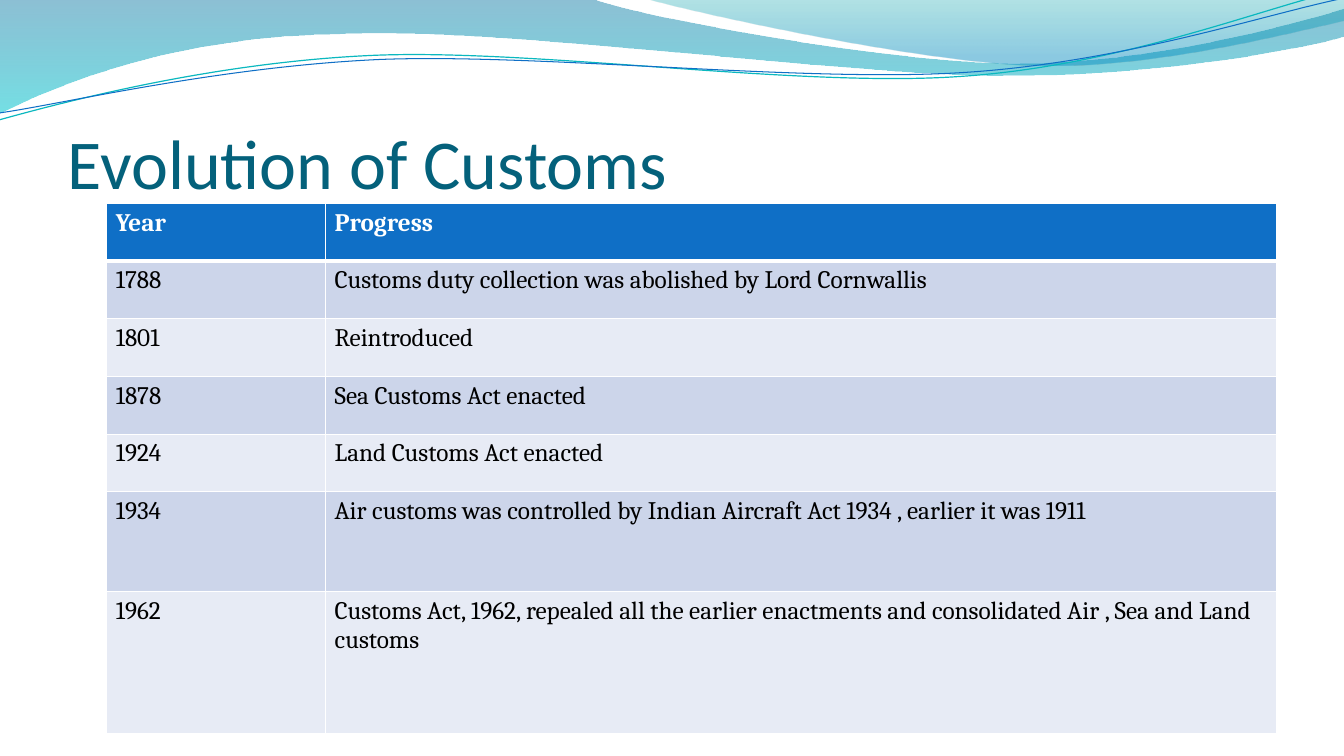
from math import cos, radians, sin
from lxml import etree
from pptx import Presentation
from pptx.dml.color import RGBColor
from pptx.enum.text import MSO_ANCHOR
from pptx.oxml.ns import qn
from pptx.util import Inches, Pt

BOTTOM = MSO_ANCHOR.BOTTOM
TILT = 357.3  # turn of the strands, in degrees

# Each outline is a start point, then lines (2 numbers) and curves (6 numbers)
WAVES = [
    ([(0, 0), (5.87, -0.01), (6.34, 0.17, 8.85, 0.63, 10.11, 0.63),
      (11.38, 0.63, 12.78, 0.26, 13.33, 0.09), (13.35, 0.36),
      (13.11, 0.44, 11.6, 0.76, 9.94, 0.75),
      (8.29, 0.75, 5.09, 0.28, 3.43, 0.34),
      (1.72, 0.36, 0.61, 0.83, -0.01, 1.13)],
     [(0, "0074A1", 45), (1, "00C6CF", 55)]),
    ([(6.39, -0.01), (6.79, 0.11, 9.09, 0.62, 10.25, 0.65),
      (11.41, 0.69, 12.82, 0.32, 13.33, 0.21), (13.33, 0)],
     [(0, "00A1A9", 30), (0.8, "008BBF", 45)]),
]
# Strands also have the centre of their turn
STRANDS = [
    ([(-0.01, 1.19), (0.64, 1.01, 2.11, 0.62, 3.69, 0.55),
      (5.27, 0.48, 7.9, 0.87, 9.5, 0.76),
      (11.1, 0.66, 12.52, 0.08, 13.31, -0.1)],
     (6.65, 0.58), "0AB8BF", 0.85),
    ([(0, 1.12), (0.63, 1.03, 2.18, 0.66, 3.78, 0.59),
      (5.37, 0.53, 7.96, 0.82, 9.55, 0.72),
      (11.15, 0.62, 12.55, 0.14, 13.34, -0.02)],
     (6.67, 0.59), "0F6FC6", 0.75),
]
COLS = [2.17, 9.43]
HEIGHTS = [2.86 / 5] * 5 + [0.99, 1.41]
ROWS = [
    ("Year", "Progress"),
    ("1788", "Customs duty collection was abolished by Lord Cornwallis"),
    ("1801", "Reintroduced"),
    ("1878", "Sea Customs Act enacted"),
    ("1924", "Land Customs Act enacted"),
    ("1934", "Air customs was controlled by Indian Aircraft Act 1934 , "
             "earlier it was 1911"),
    ("1962", "Customs Act, 1962, repealed all the earlier enactments and "
             "consolidated Air , Sea and Land customs"),
]


def color(text):
    return RGBColor.from_string(text)


def assign(item, **values):
    for name, value in values.items():
        setattr(item, name, value)


def write(frame, text, hue, **style):
    frame.text = text
    font = frame.paragraphs[0].runs[0].font
    assign(font, **style)
    font.color.rgb = color(hue)


def pairs(part):
    return list(zip(part[::2], part[1::2]))


def level(outline, centre):
    """Turn an outline back to its untilted place."""
    turn = radians(360 - TILT)
    mid_x, mid_y = centre
    flat = []
    for part in outline:
        spots = []
        for x, y in pairs(part):
            dx, dy = x - mid_x, y - mid_y
            spots += [mid_x + dx * cos(turn) - dy * sin(turn),
                      mid_y + dx * sin(turn) + dy * cos(turn)]
        flat.append(tuple(spots))
    return flat


def add_path(slide, outline, close):
    points = [(Inches(x), Inches(y)) for part in outline
              for x, y in pairs(part)]
    path = slide.shapes.build_freeform(*points[0])
    path.add_line_segments(points[1:], close=close)
    shape = path.convert_to_shape()
    shape.shadow.inherit = False
    # Join each three lines of a curve into one Bezier segment
    lines = iter(list(shape._element.spPr.iter(qn("a:lnTo"))))
    for part in outline[1:]:
        line = next(lines)
        if len(part) == 6:
            line.addprevious(etree.Element(qn("a:cubicBezTo")))
            curve = line.getprevious()
            for piece in (line, next(lines), next(lines)):
                curve.append(piece[0])
                piece.getparent().remove(piece)
    return shape


def add_wave(slide, outline, stops):
    shape = add_path(slide, outline, True)
    shape.line.fill.background()
    fill = shape.fill
    fill.gradient()
    fill.gradient_angle = 270
    for stop, (place, hue, _) in zip(fill.gradient_stops, stops):
        stop.position = place
        stop.color.rgb = color(hue)
    tints = shape._element.spPr.iter(qn("a:srgbClr"))
    for tint, (_, _, alpha) in zip(list(tints), stops):
        etree.SubElement(tint, qn("a:alpha"), val=str(alpha * 1000))


def add_strand(slide, outline, centre, hue, width):
    shape = add_path(slide, level(outline, centre), False)
    shape.rotation = TILT
    shape.fill.background()
    shape.line.color.rgb = color(hue)
    shape.line.width = Pt(width)


def add_title(slide, text):
    box = slide.shapes.add_textbox(Inches(0.67), Inches(0.77),
                                   Inches(12), Inches(1.25))
    frame = box.text_frame
    assign(frame, word_wrap=True, vertical_anchor=BOTTOM, margin_left=0,
           margin_right=0, margin_top=Inches(0.05), margin_bottom=0)
    write(frame, text, "04617B", size=Pt(50), name="Calibri")


def add_edges(cell, row):
    """Draw white borders, thick below the heading row."""
    props = cell._tc.get_or_add_tcPr()
    for side in "LRTB":
        thick = (row, side) in ((0, "B"), (1, "T"))
        edge = etree.SubElement(props, qn("a:ln" + side),
                                w=str(Pt(3 if thick else 1)))
        fill = etree.SubElement(edge, qn("a:solidFill"))
        etree.SubElement(fill, qn("a:srgbClr"), val="FFFFFF")


def add_grid(slide):
    table = slide.shapes.add_table(
        len(ROWS), len(COLS), Inches(1.06), Inches(2.02),
        Inches(sum(COLS)), Inches(sum(HEIGHTS))).table
    for col, width in zip(table.columns, COLS):
        col.width = Inches(width)
    for r, (texts, height) in enumerate(zip(ROWS, HEIGHTS)):
        table.rows[r].height = Inches(height)
        head = r == 0
        back = "0F6FC6" if head else ("E7EBF5", "CCD5EA")[r % 2]
        for c, text in enumerate(texts):
            cell = table.cell(r, c)
            add_edges(cell, r)
            cell.fill.solid()
            cell.fill.fore_color.rgb = color(back)
            assign(cell, margin_left=Inches(0.09), margin_right=Inches(0.09),
                   margin_top=Inches(0.05), margin_bottom=Inches(0.05))
            write(cell.text_frame, text, "FFFFFF" if head else "000000",
                  size=Pt(18), name="Cambria", bold=head)


def main():
    deck = Presentation()
    assign(deck, slide_width=Inches(13.33), slide_height=Inches(7.5))
    slide = deck.slides.add_slide(deck.slide_layouts[6])
    # Banner
    for wave in WAVES:
        add_wave(slide, *wave)
    for strand in STRANDS:
        add_strand(slide, *strand)
    # Content
    add_title(slide, "Evolution of Customs")
    add_grid(slide)
    deck.save("out.pptx")


if __name__ == "__main__":
    main()
